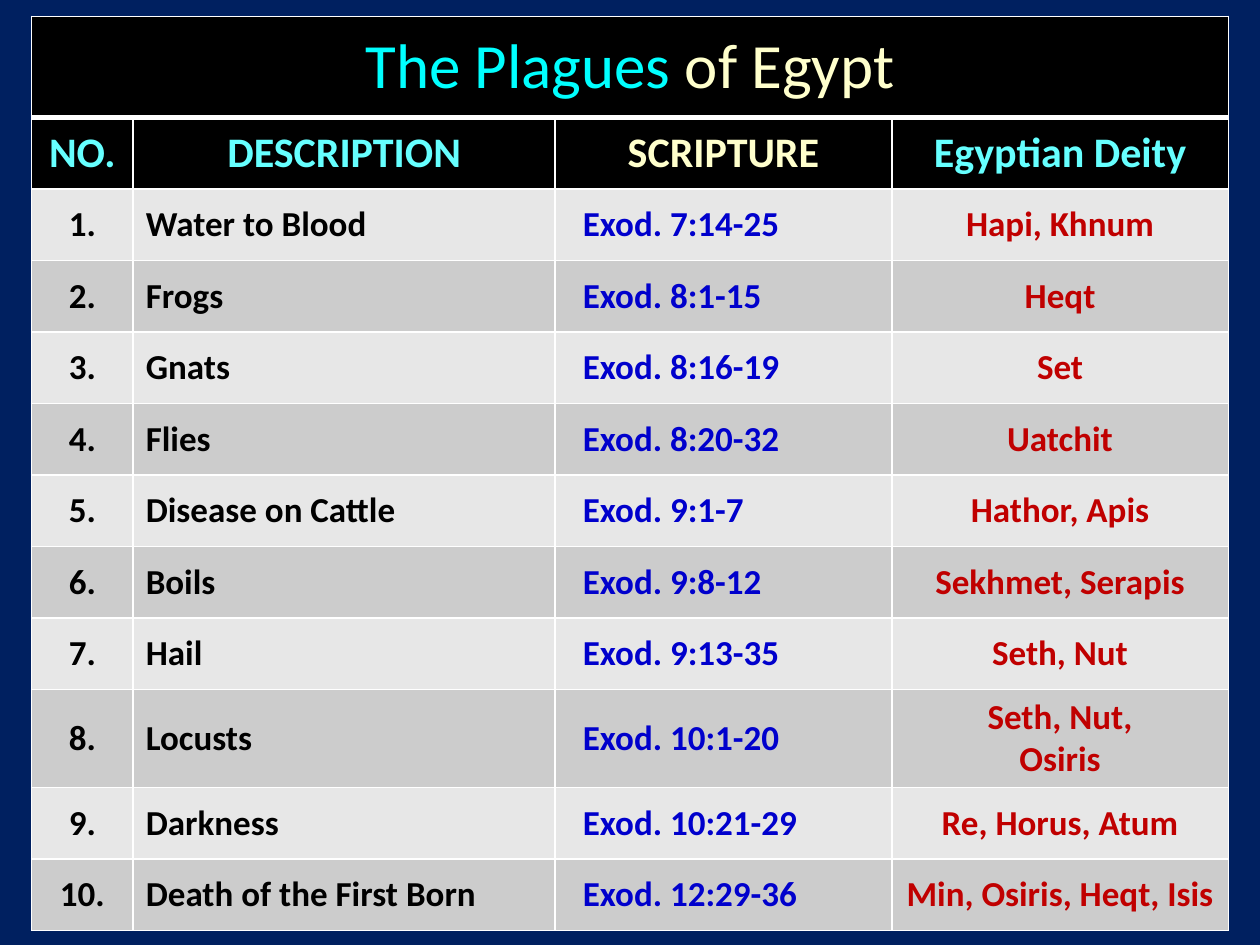
from pptx import Presentation
from pptx.dml.color import RGBColor
from pptx.enum.text import MSO_ANCHOR, PP_ALIGN
from pptx.oxml import parse_xml
from pptx.oxml.ns import nsdecls
from pptx.util import Emu, Pt

NAVY = RGBColor(0x00, 0x20, 0x60)
BLACK = RGBColor(0x00, 0x00, 0x00)
WHITE = RGBColor(0xFF, 0xFF, 0xFF)
CYAN = RGBColor(0x00, 0xFF, 0xFF)
AQUA = RGBColor(0x66, 0xFF, 0xFF)
CREAM = RGBColor(0xFF, 0xFF, 0xCC)
BLUE = RGBColor(0x00, 0x00, 0xCC)
RED = RGBColor(0xC0, 0x00, 0x00)
LIGHT_GRAY = RGBColor(0xE7, 0xE7, 0xE7)
MID_GRAY = RGBColor(0xCC, 0xCC, 0xCC)

PAGE_WIDTH, PAGE_HEIGHT = 1920, 1440
TABLE_BOX = (48, 25, 1824, 1398)
COLUMN_WIDTHS = [155, 643, 513, 513]
TITLE_HEIGHT, ROW_HEIGHT = 154, 109
SCRIPTURE_INDENT = 23

TITLE = [("The Plagues ", CYAN), ("of Egypt", CREAM)]
HEADINGS = ["NO.", "DESCRIPTION", "SCRIPTURE", "Egyptian Deity"]
HEADING_COLORS = [AQUA, AQUA, CREAM, AQUA]
BODY_COLORS = [BLACK, BLACK, BLUE, RED]
BODY_ALIGNMENTS = [PP_ALIGN.CENTER, PP_ALIGN.LEFT, PP_ALIGN.LEFT, PP_ALIGN.CENTER]
PLAGUES = [
    ("Water to Blood", "Exod. 7:14-25", "Hapi, Khnum"),
    ("Frogs", "Exod. 8:1-15", "Heqt"),
    ("Gnats", "Exod. 8:16-19", "Set"),
    ("Flies", "Exod. 8:20-32", "Uatchit"),
    ("Disease on Cattle", "Exod. 9:1-7", "Hathor, Apis"),
    ("Boils", "Exod. 9:8-12", "Sekhmet, Serapis"),
    ("Hail", "Exod. 9:13-35", "Seth, Nut"),
    ("Locusts", "Exod. 10:1-20", "Seth, Nut,\nOsiris"),
    ("Darkness", "Exod. 10:21-29", "Re, Horus, Atum"),
    ("Death of the First Born", "Exod. 12:29-36", "Min, Osiris, Heqt, Isis"),
]


def px(length):
    """192 px make one inch."""
    return Emu(round(length * 914400 / 192))


def style_cell(cell, fill, top=1, bottom=1):
    """Set borders, whose widths are in points, then fill and anchor."""
    properties = cell._tc.get_or_add_tcPr()
    for side, width in (("L", 1), ("R", 1), ("T", top), ("B", bottom)):
        properties.append(parse_xml(
            f'<a:ln{side} {nsdecls("a")} w="{Pt(width)}"><a:solidFill>'
            f'<a:srgbClr val="{WHITE}"/></a:solidFill></a:ln{side}>'))
    cell.fill.solid()
    cell.fill.fore_color.rgb = fill
    cell.vertical_anchor = MSO_ANCHOR.MIDDLE


def style_span(span, size, color, bold):
    span.font.name = "Calibri"
    span.font.size = Pt(size)
    span.font.bold = bold
    span.font.color.rgb = color


def write_cell(cell, text, size, color, alignment):
    cell.text_frame.text = text
    for para in cell.text_frame.paragraphs:
        para.alignment = alignment
        for span in para.runs:
            style_span(span, size, color, True)


def fill_title_row(table):
    for cell in table.rows[0].cells:
        style_cell(cell, BLACK, bottom=3)
    title_cell = table.cell(0, 0)
    title_cell.merge(table.cell(0, len(COLUMN_WIDTHS) - 1))
    para = title_cell.text_frame.paragraphs[0]
    para.alignment = PP_ALIGN.CENTER
    for text, color in TITLE:
        span = para.add_run()
        span.text = text
        style_span(span, 36, color, False)


def fill_heading_row(table):
    for cell, text, color in zip(table.rows[1].cells, HEADINGS, HEADING_COLORS):
        style_cell(cell, BLACK, top=3)
        write_cell(cell, text, 24, color, PP_ALIGN.CENTER)


def fill_plague_rows(table):
    for number, plague in enumerate(PLAGUES, 1):
        cells = list(table.rows[number + 1].cells)
        texts = (f"{number}.", *plague)
        for cell, text, color, alignment in zip(cells, texts, BODY_COLORS, BODY_ALIGNMENTS):
            style_cell(cell, LIGHT_GRAY if number % 2 else MID_GRAY)
            write_cell(cell, text, 20, color, alignment)
        # Scripture references are indented
        para = cells[2].text_frame.paragraphs[0]
        para._p.get_or_add_pPr().set("marL", str(px(SCRIPTURE_INDENT)))


def add_plague_table(page, box):
    frame = page.shapes.add_table(len(PLAGUES) + 2, len(COLUMN_WIDTHS), *map(px, box))
    table = frame.table
    for column, width in zip(table.columns, COLUMN_WIDTHS):
        column.width = px(width)
    for row in table.rows:
        row.height = px(ROW_HEIGHT)
    table.rows[0].height = px(TITLE_HEIGHT)
    fill_title_row(table)
    fill_heading_row(table)
    fill_plague_rows(table)


def main():
    deck = Presentation()
    deck.slide_width, deck.slide_height = px(PAGE_WIDTH), px(PAGE_HEIGHT)
    page = deck.slides.add_slide(deck.slide_layouts[6])
    page.background.fill.solid()
    page.background.fill.fore_color.rgb = NAVY
    add_plague_table(page, TABLE_BOX)
    deck.save("out.pptx")


if __name__ == "__main__":
    main()
